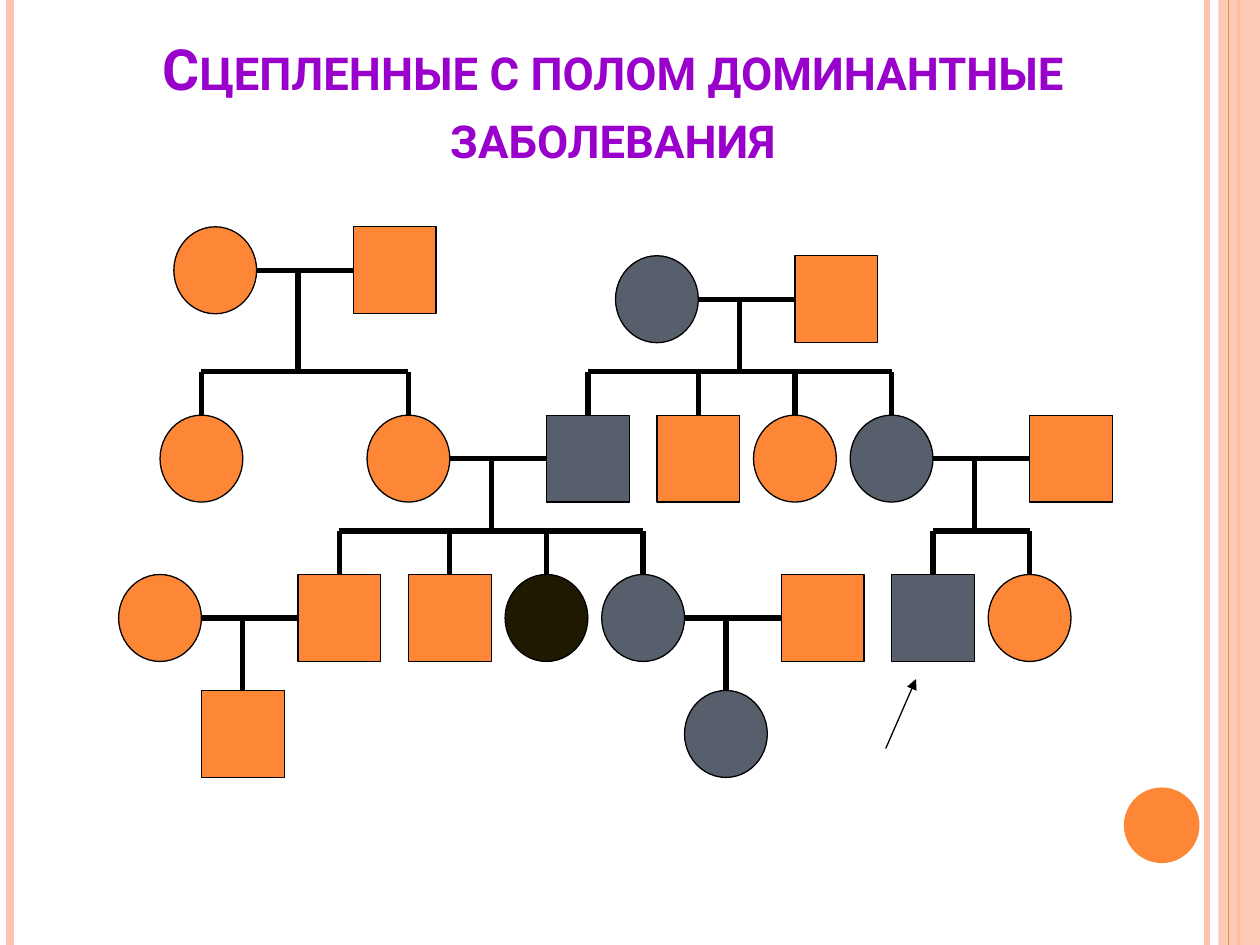
from lxml.etree import SubElement
from pptx import Presentation
from pptx.dml.color import RGBColor
from pptx.enum.shapes import MSO_CONNECTOR, MSO_SHAPE
from pptx.enum.text import MSO_ANCHOR, MSO_AUTO_SIZE, PP_ALIGN
from pptx.oxml.ns import qn
from pptx.util import Inches, Pt

ORANGE = RGBColor(0xFE, 0x86, 0x37)
PEACH = RGBColor(0xFE, 0xC3, 0xAE)
SLATE = RGBColor(0x57, 0x5F, 0x6D)
DARK = RGBColor(0x1E, 0x19, 0x00)
BLACK = RGBColor(0, 0, 0)
PURPLE = RGBColor(0x99, 0x00, 0xCC)

presentation = Presentation()
presentation.slide_width, presentation.slide_height = Inches(10), Inches(7.5)
slide = presentation.slides.add_slide(presentation.slide_layouts[5])

# Pedigree grid: positions are centres, counted from the leftmost person
# and from the top of the first generation
COLUMN = Inches(7.23) / 66
ROW = Inches(3.68) / 32
LEFT, TOP = Inches(1.27), Inches(1.8)
SYMBOL = 6    # columns and rows covered by one person
SPOUSE = 13   # columns from one partner to the other
DESCENT = 6   # columns from the left partner to the line of descent
WOMAN, MAN = MSO_SHAPE.OVAL, MSO_SHAPE.RECTANGLE


def add_line(x1, y1, x2, y2, color=BLACK, width=3):
    line = slide.shapes.add_connector(
        MSO_CONNECTOR.STRAIGHT, *(round(v) for v in (x1, y1, x2, y2)))
    line.line.color.rgb = color
    line.line.width = Pt(width)
    SubElement(line._element.spPr, qn("a:effectLst"))
    return line


def add_filled(kind, x, y, width, height, color):
    shape = slide.shapes.add_shape(
        kind, *(round(v) for v in (x, y, width, height)))
    shape.shadow.inherit = False
    shape.fill.solid()
    shape.fill.fore_color.rgb = color
    shape.line.fill.background()
    return shape


# Border stripes and corner disc
for x, color, width in [(9.58, PEACH, 3), (0.08, PEACH, 4.5), (9.83, ORANGE, 1.5)]:
    add_line(Inches(x), 0, Inches(x), presentation.slide_height, color, width)
band = add_filled(MSO_SHAPE.RECTANGLE, Inches(9.67), 0, Inches(0.33),
                  presentation.slide_height, PEACH)
band_color = band._element.spPr.find(qn("a:solidFill"))[0]
SubElement(band_color, qn("a:alpha"), val="87000")
add_line(Inches(9.75), 0, Inches(9.75), presentation.slide_height, ORANGE, 0.75)
add_filled(MSO_SHAPE.OVAL, Inches(8.92), Inches(6.25), Inches(0.6), Inches(0.6), ORANGE)

# Title
title = slide.shapes.title
title.left, title.top = Inches(0.7), Inches(0.23)
title.width, title.height = Inches(8.33), Inches(1.17)
heading = title.text_frame
heading.text = "Сцепленные с полом доминантные заболевания"
heading.word_wrap = True
heading.auto_size = MSO_AUTO_SIZE.NONE
heading.vertical_anchor = MSO_ANCHOR.BOTTOM
heading.paragraphs[0].alignment = PP_ALIGN.CENTER
heading_font = heading.paragraphs[0].runs[0].font
heading_font.name, heading_font.size, heading_font.bold = "Roboto", Pt(32.4), True
heading_font.color.rgb = PURPLE
heading_font._element.set("cap", "small")

# Families: column and row of the left partner, row where the descent ends,
# columns of the siblings, row of the siblings' tops
families = [
    (4, 3, 10, [3, 18], 13),
    (36, 5, 10, [31, 39, 46, 53], 13),
    (18, 16, 21, [13, 21, 28, 35], 24),
    (53, 16, 21, [56, 63], 24),
    (0, 27, 32, [], 32),
    (35, 27, 32, [], 32),
]
for partner, row, descent_end, siblings, sibling_top in families:
    segments = [
        (partner + SYMBOL / 2, row, partner + SPOUSE - SYMBOL / 2, row),
        (partner + DESCENT, row, partner + DESCENT, descent_end),
    ]
    if siblings:
        segments.append((siblings[0], descent_end, siblings[-1], descent_end))
    segments += [(s, descent_end, s, sibling_top) for s in siblings]
    for x1, y1, x2, y2 in segments:
        add_line(LEFT + x1 * COLUMN, TOP + y1 * ROW,
                 LEFT + x2 * COLUMN, TOP + y2 * ROW)

# People by row of their centres: column, sex, colour
people = {
    3: [(4, WOMAN, ORANGE), (17, MAN, ORANGE)],
    5: [(36, WOMAN, SLATE), (49, MAN, ORANGE)],
    16: [(3, WOMAN, ORANGE), (18, WOMAN, ORANGE), (31, MAN, SLATE),
         (39, MAN, ORANGE), (46, WOMAN, ORANGE), (53, WOMAN, SLATE),
         (66, MAN, ORANGE)],
    27: [(0, WOMAN, ORANGE), (13, MAN, ORANGE), (21, MAN, ORANGE),
         (28, WOMAN, DARK), (35, WOMAN, SLATE), (48, MAN, ORANGE),
         (56, MAN, SLATE), (63, WOMAN, ORANGE)],
    35: [(6, MAN, ORANGE), (41, WOMAN, SLATE)],
}
for row, generation in people.items():
    for column, sex, color in generation:
        person = add_filled(sex, LEFT + (column - SYMBOL / 2) * COLUMN,
                            TOP + (row - SYMBOL / 2) * ROW,
                            SYMBOL * COLUMN, SYMBOL * ROW, color)
        person.line.color.rgb = BLACK
        person.line.width = Pt(0.75)

# Arrow to the proband
proband_arrow = add_line(Inches(7.03), Inches(5.94), Inches(7.27), Inches(5.39), width=0.75)
SubElement(proband_arrow.line._get_or_add_ln(), qn("a:tailEnd"), type="triangle")

presentation.save("out.pptx")
